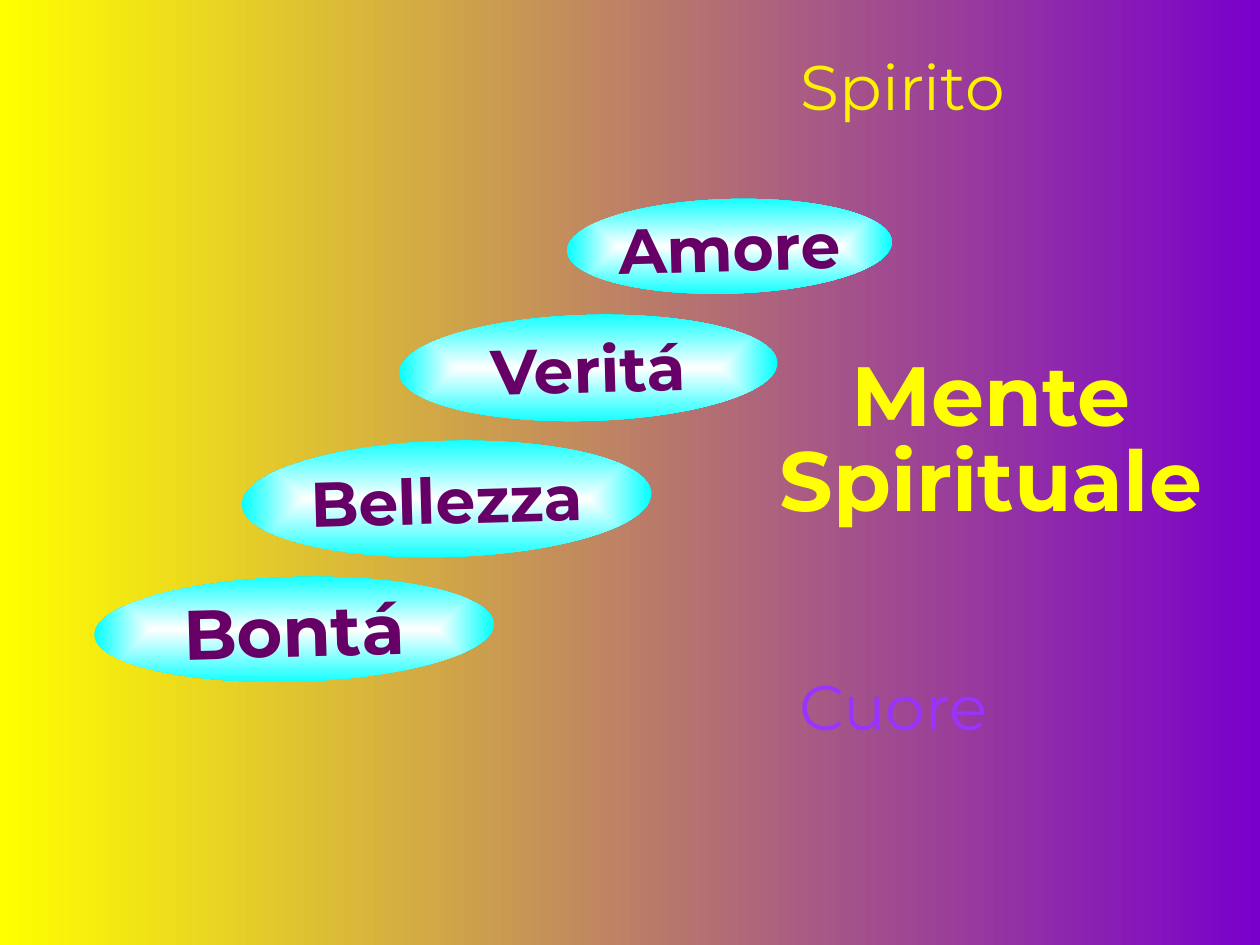
from lxml import etree
from pptx import Presentation
from pptx import util as u
from pptx.dml.color import RGBColor
from pptx.enum import shapes, text
from pptx.oxml.ns import qn


def rgb(value):
    return RGBColor.from_string(value)


class Deck:
    font = "Montserrat"
    yellow, violet, purple = "FFFF00", "7900CC", "660066"
    white, cyan = "FFFFFF", "00FFFF"
    tilt = -1.6

    def __init__(self, prs):
        self.s = prs.slides.add_slide(prs.slide_layouts[6])

    def gradient(self, fill, *colours):
        fill.gradient()
        for stop, colour in zip(fill.gradient_stops, colours):
            stop.color.rgb = rgb(colour)

    def background(self):
        fill = self.s.background.fill
        self.gradient(fill, self.yellow, self.violet)
        fill.gradient_angle = 0

    def set_words(self, sp, words, size, colour, bold, spacing=None):
        tf = sp.text_frame
        tf.text = words
        tf.word_wrap = False
        for p in tf.paragraphs:
            p.alignment = text.PP_ALIGN.CENTER
            p.line_spacing = spacing
            for r in p.runs:
                r.font.name = self.font
                r.font.size = u.Pt(size)
                r.font.bold = bold
                r.font.color.rgb = rgb(colour)

    def label(self, words, box, size, colour, bold=False, spacing=None):
        sp = self.s.shapes.add_textbox(*map(u.Inches, box))
        self.set_words(sp, words, size, colour, bold, spacing)
        return sp

    def ellipse(self, words, box, size):
        sp = self.s.shapes.add_shape(shapes.MSO_SHAPE.OVAL, *map(u.Inches, box))
        sp.rotation = self.tilt
        sp.shadow.inherit = False
        sp.line.fill.background()
        self.gradient(sp.fill, self.white, self.cyan)
        grad = sp._element.spPr.find(qn("a:gradFill"))
        grad.remove(grad.find(qn("a:lin")))
        centre = etree.SubElement(grad, qn("a:path"), {"path": "shape"})
        etree.SubElement(centre, qn("a:fillToRect"),
                         {side: "50000" for side in "ltrb"})
        sp.text_frame.vertical_anchor = text.MSO_ANCHOR.MIDDLE
        self.set_words(sp, words, size, self.purple, True)


def main():
    prs = Presentation()
    prs.slide_width, prs.slide_height = u.Inches(10), u.Inches(7.5)
    deck = Deck(prs)
    deck.background()
    cuore = deck.label("Cuore", (4.42, 5.25, 5.34, 1.92), 36, "9933FF")
    cuore.rotation = 0.1
    for words, box, size in (
        ("Bontá", (0.75, 4.58, 3.17, 0.83), 40),
        ("Veritá", (3.17, 2.5, 3, 0.84), 36),
        ("Bellezza", (1.92, 3.5, 3.25, 0.92), 36),
        ("Amore", (4.5, 1.58, 2.58, 0.75), 36),
    ):
        deck.ellipse(words, box, size)
    deck.label("Spirito", (4.75, 0.33, 4.83, 0.92), 36, "FFF200")
    mente = deck.label("Mente\nSpirituale", (6, 2.79, 3.73, 1.46), 48,
                       deck.yellow, True, 0.85)
    mente.text_frame.auto_size = text.MSO_AUTO_SIZE.SHAPE_TO_FIT_TEXT
    prs.save("out.pptx")


if __name__ == "__main__":
    main()
